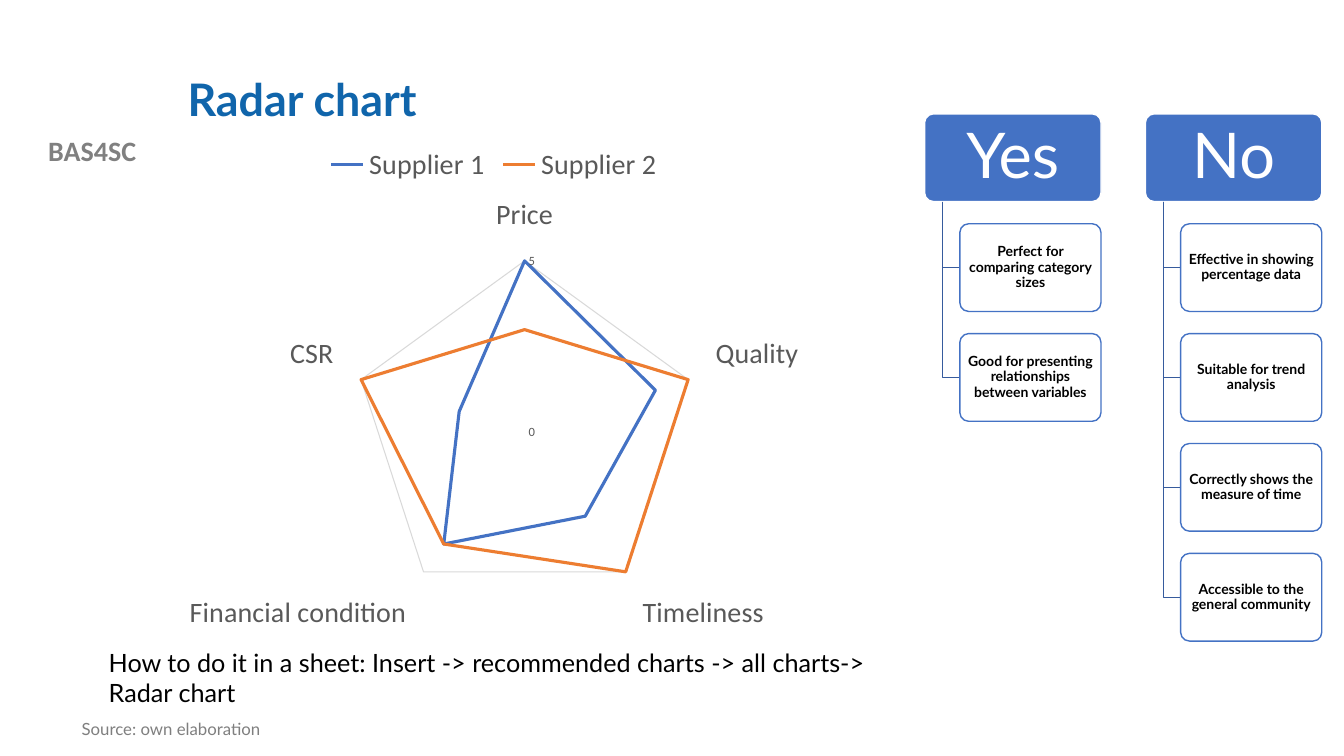
from lxml.etree import SubElement
from pptx import Presentation
from pptx.chart.data import CategoryChartData
from pptx.dml.color import RGBColor
from pptx.enum.chart import XL_CHART_TYPE, XL_LEGEND_POSITION, XL_TICK_MARK
from pptx.enum.shapes import MSO_SHAPE
from pptx.enum.text import MSO_ANCHOR, MSO_AUTO_SIZE, PP_ALIGN
from pptx.oxml.ns import qn
from pptx.util import Inches, Pt

BLUE = RGBColor(0x44, 0x72, 0xC4)
ORANGE = RGBColor(0xED, 0x7D, 0x31)
BRANCH_BLUE = RGBColor(0x36, 0x5B, 0x9D)
TITLE_BLUE = RGBColor(0x10, 0x65, 0xAB)
WHITE = RGBColor(0xFF, 0xFF, 0xFF)
BLACK = RGBColor(0, 0, 0)
LABEL_GRAY = RGBColor(0x80, 0x80, 0x80)
SOURCE_GRAY = RGBColor(0x7F, 0x7F, 0x7F)
CHART_GRAY = RGBColor(0x59, 0x59, 0x59)
GRID_GRAY = RGBColor(0xD9, 0xD9, 0xD9)

COLUMNS = [
    ("Yes", ["Perfect for comparing category sizes",
             "Good for presenting relationships between variables"]),
    ("No", ["Effective in showing percentage data",
            "Suitable for trend analysis",
            "Correctly shows the measure of time",
            "Accessible to the general community"]),
]
CATEGORIES = ["Price", "Quality", "Timeliness", "Financial condition", "CSR"]
SUPPLIERS = [("Supplier 1", [5, 4, 3, 4, 2], BLUE),
             ("Supplier 2", [3, 5, 5, 4, 5], ORANGE)]

COLUMN_LEFT, COLUMN_PITCH = 9.17, 2.19
COLUMN_TOP, ROW_PITCH = 1.13, 1.09
HEAD_WIDTH, BOX_WIDTH, BOX_HEIGHT = 1.75, 1.4, 0.87
SPINE_INDENT, BOX_INDENT = 0.18, 0.35


class SlideBuilder:
    text_font = "Lato"
    chart_font = "Calibri"

    def __init__(self, presentation):
        self.slide = presentation.slides.add_slide(presentation.slide_layouts[1])
        self.shapes = self.slide.shapes

    def style(self, font, size, color, bold=False, name=None):
        font.name = name or self.text_font
        font.size = Pt(size)
        font.bold = bold
        font.color.rgb = color

    def set_text(self, shape, text, size, color, bold=False, align=PP_ALIGN.LEFT,
                 anchor=MSO_ANCHOR.TOP, spacing=0.9, name=None):
        frame = shape.text_frame
        frame.word_wrap = True
        frame.auto_size = MSO_AUTO_SIZE.NONE
        frame.vertical_anchor = anchor
        frame.text = text
        paragraph = frame.paragraphs[0]
        paragraph.alignment = align
        paragraph.line_spacing = spacing
        paragraph.space_before = Pt(0)
        self.style(paragraph.font, size, color, bold, name)
        return paragraph

    def placeholder(self, shape, box, text, size, color, **options):
        shape.left, shape.top, shape.width, shape.height = map(Inches, box)
        properties = self.set_text(shape, text, size, color, **options)._p.get_or_add_pPr()
        properties.set("marL", "0")
        properties.set("indent", "0")
        properties.insert_element_before(
            properties.makeelement(qn("a:buNone")), "a:tabLst", "a:defRPr", "a:extLst")

    def text_box(self, box, text, size, color, **options):
        shape = self.shapes.add_textbox(*map(Inches, box))
        self.set_text(shape, text, size, color, **options)

    def rounded_box(self, box, text, size, color, fill, line, insets,
                    bold=False, opacity=100):
        shape = self.shapes.add_shape(MSO_SHAPE.ROUNDED_RECTANGLE, *map(Inches, box))
        shape.adjustments[0] = 0.1
        shape.shadow.inherit = False
        shape.fill.solid()
        shape.fill.fore_color.rgb = fill
        if opacity < 100:
            fill_color = shape._element.spPr.find(f"{qn('a:solidFill')}/{qn('a:srgbClr')}")
            SubElement(fill_color, qn("a:alpha"), val=str(opacity * 1000))
        shape.line.color.rgb = line
        shape.line.width = Pt(1)
        frame = shape.text_frame
        frame.margin_left = frame.margin_right = Inches(insets[0])
        frame.margin_top = frame.margin_bottom = Inches(insets[1])
        self.set_text(shape, text, size, color, bold, PP_ALIGN.CENTER, MSO_ANCHOR.MIDDLE)

    def branch(self, left, top, right, bottom):
        left, top, right, bottom = map(Inches, (left, top, right, bottom))
        builder = self.shapes.build_freeform(left, top)
        builder.add_line_segments([(left, bottom), (right, bottom)], close=False)
        shape = builder.convert_to_shape()
        shape.shadow.inherit = False
        shape.fill.background()
        shape.line.color.rgb = BRANCH_BLUE
        shape.line.width = Pt(1)

    def column(self, left, heading, points):
        self.rounded_box((left, COLUMN_TOP, HEAD_WIDTH, BOX_HEIGHT), heading, 45,
                         WHITE, BLUE, WHITE, (0.09, 0.06))
        box_left = left + BOX_INDENT
        for row, point in enumerate(points, start=1):
            top = COLUMN_TOP + row * ROW_PITCH
            self.branch(left + SPINE_INDENT, COLUMN_TOP + BOX_HEIGHT,
                        box_left, top + BOX_HEIGHT / 2)
            self.rounded_box((box_left, top, BOX_WIDTH, BOX_HEIGHT), point, 10,
                             BLACK, WHITE, BLUE, (0.02, 0.01), bold=True, opacity=90)

    def radar_chart(self, box, categories, suppliers):
        data = CategoryChartData()
        data.categories = categories
        for name, values, _ in suppliers:
            data.add_series(name, values)
        chart = self.shapes.add_chart(XL_CHART_TYPE.RADAR, *map(Inches, box), data).chart
        self.style(chart.font, 10, BLACK, name=self.chart_font)
        chart.has_title = False
        chart.has_legend = True
        chart.legend.position = XL_LEGEND_POSITION.TOP
        chart.legend.include_in_layout = False
        self.style(chart.legend.font, 20, CHART_GRAY, name=self.chart_font)
        for axis, size in ((chart.category_axis, 20), (chart.value_axis, 9)):
            axis.major_tick_mark = axis.minor_tick_mark = XL_TICK_MARK.NONE
            self.style(axis.tick_labels.font, size, CHART_GRAY, name=self.chart_font)
        value_axis = chart.value_axis
        value_axis.minimum_scale = 0
        value_axis.maximum_scale = value_axis.major_unit = 5
        value_axis.has_major_gridlines = True
        value_axis.format.line.fill.background()
        for line in (chart.category_axis.format.line, value_axis.major_gridlines.format.line):
            line.color.rgb = GRID_GRAY
            line.width = Pt(0.75)
        chart.plots[0].vary_by_categories = False
        for series, (_, _, color) in zip(chart.plots[0].series, suppliers):
            series.format.line.color.rgb = color
            series.format.line.width = Pt(2.25)


def main():
    presentation = Presentation()
    presentation.slide_width = Inches(13.33)
    presentation.slide_height = Inches(7.5)
    builder = SlideBuilder(presentation)
    title, source = builder.slide.placeholders
    builder.text_box((0, 1.28, 1.83, 0.44), "BAS4SC", 20, LABEL_GRAY, bold=True,
                     align=PP_ALIGN.CENTER, spacing=1.0, name="Calibri")
    builder.placeholder(title, (1.76, 0.4, 10.66, 1.22), "Radar chart", 32, TITLE_BLUE,
                        bold=True, anchor=MSO_ANCHOR.MIDDLE)
    builder.placeholder(source, (0.71, 7.1, 5.01, 0.32), "Source: own elaboration",
                        12, SOURCE_GRAY)
    for index, (heading, points) in enumerate(COLUMNS):
        builder.column(COLUMN_LEFT + index * COLUMN_PITCH, heading, points)
    builder.text_box((0.98, 6.37, 7.88, 0.71),
                     "How to do it in a sheet: Insert -> recommended charts -> "
                     "all charts-> Radar chart", 18, BLACK, spacing=1.0)
    builder.radar_chart((0.71, 1.33, 8.38, 5.02), CATEGORIES, SUPPLIERS)
    presentation.save("out.pptx")


if __name__ == "__main__":
    main()
